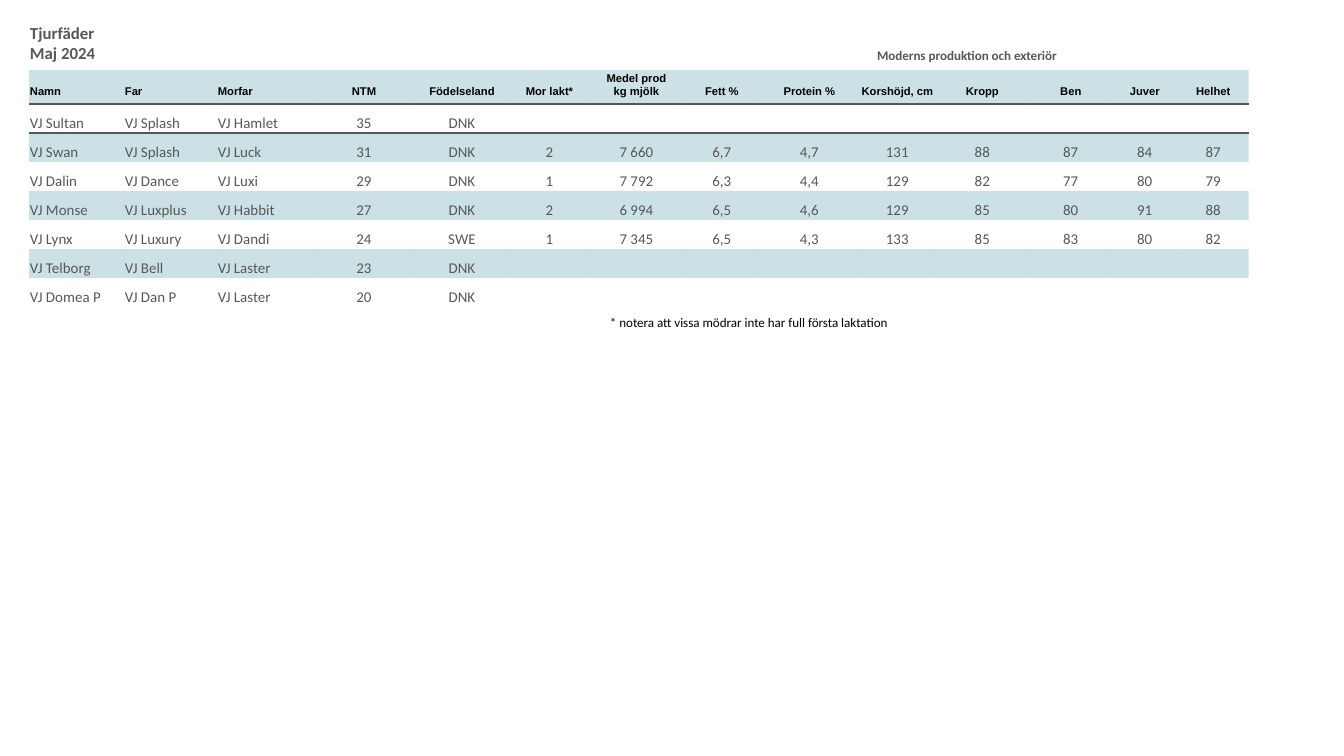
from lxml import etree
from pptx import Presentation
from pptx.dml.color import RGBColor
from pptx.enum.text import MSO_ANCHOR, PP_ALIGN
from pptx.oxml.ns import qn
from pptx.util import Pt

LEFT, CENTER = PP_ALIGN.LEFT, PP_ALIGN.CENTER
BOTTOM = MSO_ANCHOR.BOTTOM

EMU_PER_PX = 914400 / 134.4
NO_GRID_STYLE = "{2D5ABB26-0587-4C30-8999-92F81FD0307C}"
GREY, BLACK, TEAL = "575757", "000000", "006B85"

COLUMN_WIDTHS = [95, 93, 98, 98, 98, 77, 97, 74, 101, 75, 95, 82, 66, 71]
TITLE_HEIGHT, HEADER_HEIGHT, ROW_HEIGHT = 48, 34, 29
TEXT_COLUMNS = 3
HEADERS = [
    "Namn", "Far", "Morfar", "NTM", "Födelseland", "Mor lakt*",
    "Medel prod\nkg mjölk", "Fett %", "Protein %", "Korshöjd, cm",
    "Kropp", "Ben", "Juver", "Helhet",
]
SIRES = [
    ["VJ Sultan", "VJ Splash", "VJ Hamlet", "35", "DNK"],
    ["VJ Swan", "VJ Splash", "VJ Luck", "31", "DNK", "2", "7 660",
     "6,7", "4,7", "131", "88", "87", "84", "87"],
    ["VJ Dalin", "VJ Dance", "VJ Luxi", "29", "DNK", "1", "7 792",
     "6,3", "4,4", "129", "82", "77", "80", "79"],
    ["VJ Monse", "VJ Luxplus", "VJ Habbit", "27", "DNK", "2", "6 994",
     "6,5", "4,6", "129", "85", "80", "91", "88"],
    ["VJ Lynx", "VJ Luxury", "VJ Dandi", "24", "SWE", "1", "7 345",
     "6,5", "4,3", "133", "85", "83", "80", "82"],
    ["VJ Telborg", "VJ Bell", "VJ Laster", "23", "DNK"],
    ["VJ Domea P", "VJ Dan P", "VJ Laster", "20", "DNK"],
]


def px(length):
    return round(length * EMU_PER_PX)


def color(hex_string):
    return RGBColor.from_string(hex_string)


def add_plain_table(slide, left, top, widths, heights):
    frame = slide.shapes.add_table(
        len(heights), len(widths), px(left), px(top), px(sum(widths)), px(sum(heights))
    )
    for style in frame._element.iter(qn("a:tableStyleId")):
        style.text = NO_GRID_STYLE
    table = frame.table
    table.first_row = table.horz_banding = False
    for column, width in zip(table.columns, widths):
        column.width = px(width)
    for row, height in zip(table.rows, heights):
        row.height = px(height)
    for cell in table.iter_cells():
        write_cell(cell, "")
        cell.fill.background()
    return table


def write_cell(cell, text, size=8, hex_color=GREY, font="Calibri", bold=False,
               align=LEFT, bottom=0):
    cell.margin_left = cell.margin_right = cell.margin_top = px(1)
    cell.margin_bottom = px(bottom)
    cell.vertical_anchor = BOTTOM
    paragraph = cell.text_frame.paragraphs[0]
    paragraph.alignment = align
    if not text:
        etree.SubElement(paragraph._p, qn("a:endParaRPr"), sz=str(size * 100))
        return
    for end_mark in paragraph._p.findall(qn("a:endParaRPr")):
        paragraph._p.remove(end_mark)
    for index, line in enumerate(text.split("\n")):
        if index:
            paragraph.add_line_break()
        run = paragraph.add_run()
        run.text = line
        run.font.size = Pt(size)
        run.font.name = font
        run.font.bold = bold
        run.font.color.rgb = color(hex_color)
    for line_break in paragraph._p.findall(qn("a:br")):
        etree.SubElement(line_break, qn("a:rPr"), sz=str(size * 100))


def tint_cell(cell):
    cell.fill.solid()
    cell.fill.fore_color.rgb = color(TEAL)
    for value in cell._tc.iter(qn("a:srgbClr")):
        if value.getparent().getparent().tag == qn("a:tcPr"):
            etree.SubElement(value, qn("a:alpha"), val="20000")


def rule_cell(cell, side):
    line = etree.Element(qn(f"a:{side}"), w=str(Pt(1)))
    fill = etree.SubElement(line, qn("a:solidFill"))
    etree.SubElement(fill, qn("a:srgbClr"), val=GREY)
    cell._tc.tcPr.insert(0, line)


def place_sire_table(slide, left, top):
    heights = [TITLE_HEIGHT, HEADER_HEIGHT] + [ROW_HEIGHT] * len(SIRES)
    table = add_plain_table(slide, left, top, COLUMN_WIDTHS, heights)
    for first, last in [(0, 1), (5, 6), (7, 13)]:
        table.cell(0, first).merge(table.cell(0, last))
    write_cell(table.cell(0, 0), "Tjurfäder\nMaj 2024", 9, bold=True, bottom=6)
    write_cell(table.cell(0, 7), "Moderns produktion och exteriör", 7,
               bold=True, align=CENTER, bottom=6)

    for row, texts in enumerate([HEADERS] + SIRES, start=1):
        for column in range(len(COLUMN_WIDTHS)):
            cell = table.cell(row, column)
            align = LEFT if column < TEXT_COLUMNS else CENTER
            if row == 1:
                write_cell(cell, texts[column], 6, BLACK, "Arial", True, align, 6)
                rule_cell(cell, "lnB")
            elif column < len(texts):
                write_cell(cell, texts[column], align=align)
            if row == 2:
                rule_cell(cell, "lnT")
            if row % 2:
                tint_cell(cell)


def place_footnote(slide, left, top, width):
    table = add_plain_table(slide, left, top, [width], [ROW_HEIGHT])
    write_cell(table.cell(0, 0), "* notera att vissa mödrar inte har full första laktation",
               7, BLACK, bottom=6)


def main():
    presentation = Presentation()
    presentation.slide_width = px(1344)
    presentation.slide_height = px(756)
    slide = presentation.slides.add_slide(presentation.slide_layouts[6])
    place_sire_table(slide, 29, 22)
    place_footnote(slide, 609, 308, 481)
    presentation.save("out.pptx")


if __name__ == "__main__":
    main()
